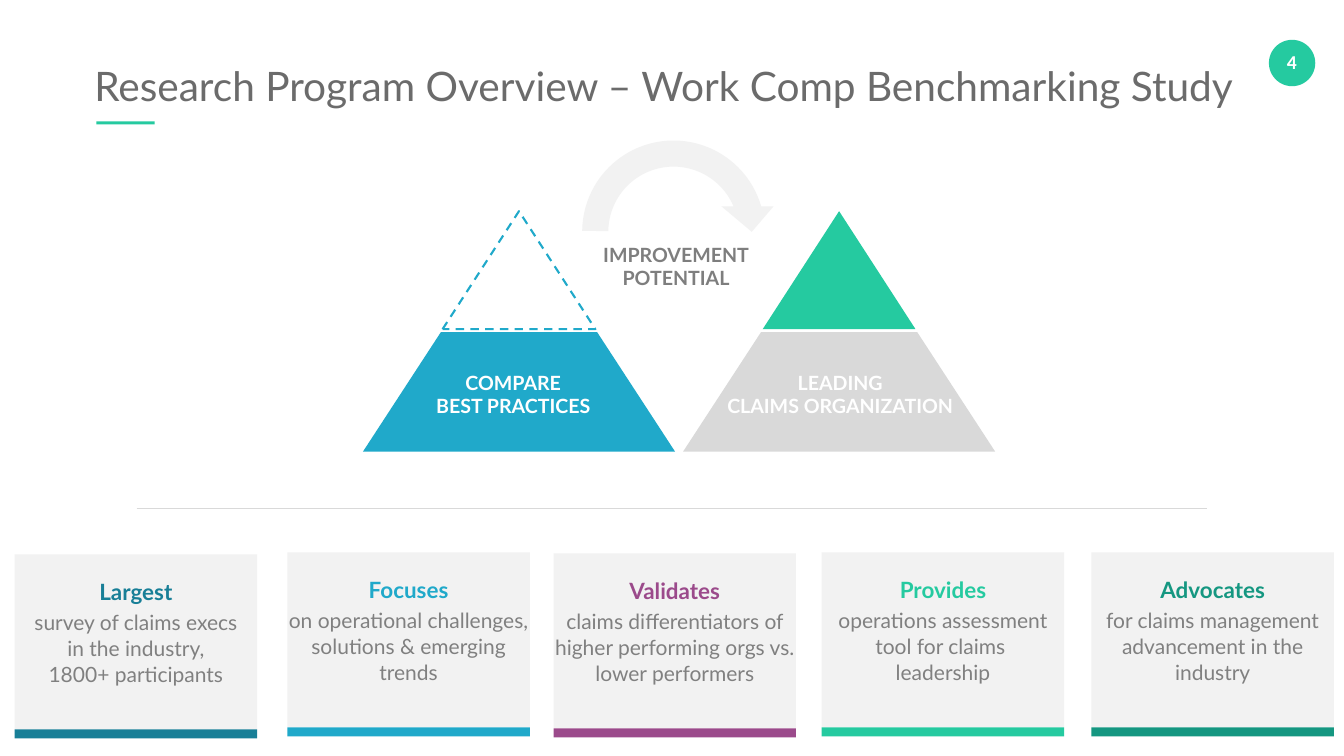
"""Build the research program overview slide."""
from dataclasses import dataclass

from lxml.etree import SubElement
from pptx import Presentation
from pptx.dml.color import RGBColor
from pptx.enum.dml import MSO_LINE
from pptx.enum.shapes import MSO_CONNECTOR, MSO_SHAPE
from pptx.enum.text import MSO_ANCHOR, MSO_AUTO_SIZE, PP_ALIGN
from pptx.oxml.ns import qn
from pptx.util import Inches, Pt


@dataclass(frozen=True)
class Theme:
    font: str = "Lato"
    badge: str = "Calibri"
    green: str = "25CAA0"
    blue: str = "20A9CA"
    navy: str = "187F97"
    plum: str = "9B4A8B"
    teal: str = "159781"
    title: str = "6B6B6B"
    label: str = "7E7E7E"
    body: str = "808080"
    rule: str = "D9D9D9"
    pale: str = "F2F2F2"
    white: str = "FFFFFF"
    title_size: int = 58
    head_size: int = 32
    body_size: int = 30
    label_size: int = 28


class Painter:
    def __init__(self, slide, theme):
        self.slide = slide
        self.theme = theme

    def shape(self, kind, box, fill=None, line=None, adjust=()):
        item = self.slide.shapes.add_shape(kind, *map(Inches, box))
        item.shadow.inherit = False
        for i, value in enumerate(adjust):
            item.adjustments[i] = value
        if fill:
            item.fill.solid()
            item.fill.fore_color.rgb = RGBColor.from_string(fill)
        else:
            item.fill.background()
        if line:
            item.line.color.rgb = RGBColor.from_string(line)
            item.line.width = Pt(3)
            item.line.dash_style = MSO_LINE.DASH
        else:
            item.line.fill.background()

    def text(self, box, lines, size, color, bold=False, font=None, wrap=False,
             align=PP_ALIGN.CENTER, inset=(0.27, 0.13), anchor=MSO_ANCHOR.TOP,
             leading=None, after=None):
        frame = self.slide.shapes.add_textbox(*map(Inches, box)).text_frame
        frame.word_wrap = wrap
        frame.auto_size = MSO_AUTO_SIZE.SHAPE_TO_FIT_TEXT
        frame.vertical_anchor = anchor
        frame.margin_left = frame.margin_right = Inches(inset[0])
        frame.margin_top = frame.margin_bottom = Inches(inset[1])
        for i, line in enumerate(lines):
            para = frame.add_paragraph() if i else frame.paragraphs[0]
            para.text = line
            para.alignment = align
            if leading:
                para.line_spacing = Pt(leading)
            if after:
                para.space_after = Pt(after)
            for run in para.runs:
                run.font.size = Pt(size)
                run.font.name = font or self.theme.font
                run.font.bold = bold
                run.font.color.rgb = RGBColor.from_string(color)

    def rule(self, left, right, top):
        ends = map(Inches, (left, top, right, top))
        item = self.slide.shapes.add_connector(MSO_CONNECTOR.STRAIGHT, *ends)
        item.line.color.rgb = RGBColor.from_string(self.theme.rule)
        item.line.width = Pt(1)
        SubElement(item._element.spPr, qn("a:effectLst"))

    def label(self, box, lines, color):
        self.text(box, lines, self.theme.label_size, color, bold=True)

    def pyramid(self, left, base, tip=None, line=None):
        self.shape(MSO_SHAPE.TRAPEZOID, (left, 6.59, 6.19, 2.37), base,
                   adjust=[0.652])
        self.shape(MSO_SHAPE.ISOSCELES_TRIANGLE,
                   (left + 1.58, 4.19, 3.03, 2.34), tip, line)

    def card(self, left, top, head, body, color):
        theme, width = self.theme, 4.81
        self.shape(MSO_SHAPE.RECTANGLE, (left, top, width, 3.47), theme.pale)
        self.text((left, top + 0.42, width, 0.64), [head], theme.head_size,
                  color, bold=True, wrap=True, inset=(0.1, 0.05))
        self.text((left, top + 1.07, width, 1.52), [body], theme.body_size,
                  theme.body, wrap=True, inset=(0, 0), leading=37.3, after=32)
        self.shape(MSO_SHAPE.RECTANGLE, (left, top + 3.47, width, 0.18), color)


def main():
    deck = Presentation()
    deck.slide_width, deck.slide_height = Inches(26.66), Inches(15)
    theme = Theme()
    paint = Painter(deck.slides.add_slide(deck.slide_layouts[6]), theme)

    paint.shape(MSO_SHAPE.OVAL, (25.17, 0.79, 0.92, 0.92), theme.green)
    paint.text((25.19, 0.9, 0.87, 0.67), ["4"], theme.label_size, theme.white,
               bold=True, font=theme.badge, inset=(0.2, 0.1))
    paint.text((1.87, 1.21, 22.77, 0.98),
               ["Research Program Overview – Work Comp Benchmarking Study"],
               theme.title_size, theme.title, align=PP_ALIGN.LEFT,
               inset=(0, 0), anchor=MSO_ANCHOR.MIDDLE)
    paint.shape(MSO_SHAPE.RECTANGLE, (1.91, 2.41, 1.16, 0.06), theme.green)

    paint.pyramid(13.55, theme.rule, tip=theme.green)
    paint.pyramid(7.2, theme.blue, line=theme.blue)
    paint.shape(MSO_SHAPE.CIRCULAR_ARROW, (11.29, 2.53, 4.14, 4.14), theme.pale,
                adjust=[0.125, 11.42, 204.58, 108.36, 0.125])
    paint.label((11.68, 4.68, 3.46, 1.21), ["IMPROVEMENT", "POTENTIAL"],
                theme.label)
    paint.label((14.12, 7.22, 5.09, 1.21), ["LEADING", "CLAIMS ORGANIZATION"],
                theme.white)
    paint.label((8.38, 7.22, 3.6, 1.21), ["COMPARE", "BEST PRACTICES"],
                theme.white)
    paint.rule(2.71, 23.95, 10.09)

    cards = [
        (0.29, 11, "Largest",
         "survey of claims execs\nin the industry,\n1800+ participants",
         theme.navy),
        (5.7, 10.96, "Focuses",
         "on operational challenges, solutions & emerging trends", theme.blue),
        (10.98, 10.98, "Validates",
         "claims differentiators of higher performing orgs vs. lower performers",
         theme.plum),
        (16.3, 10.96, "Provides",
         "operations assessment tool for claims \nleadership", theme.green),
        (21.65, 10.96, "Advocates",
         "for claims management advancement in the industry", theme.teal),
    ]
    for card in cards:
        paint.card(*card)
    deck.save("out.pptx")


if __name__ == "__main__":
    main()
